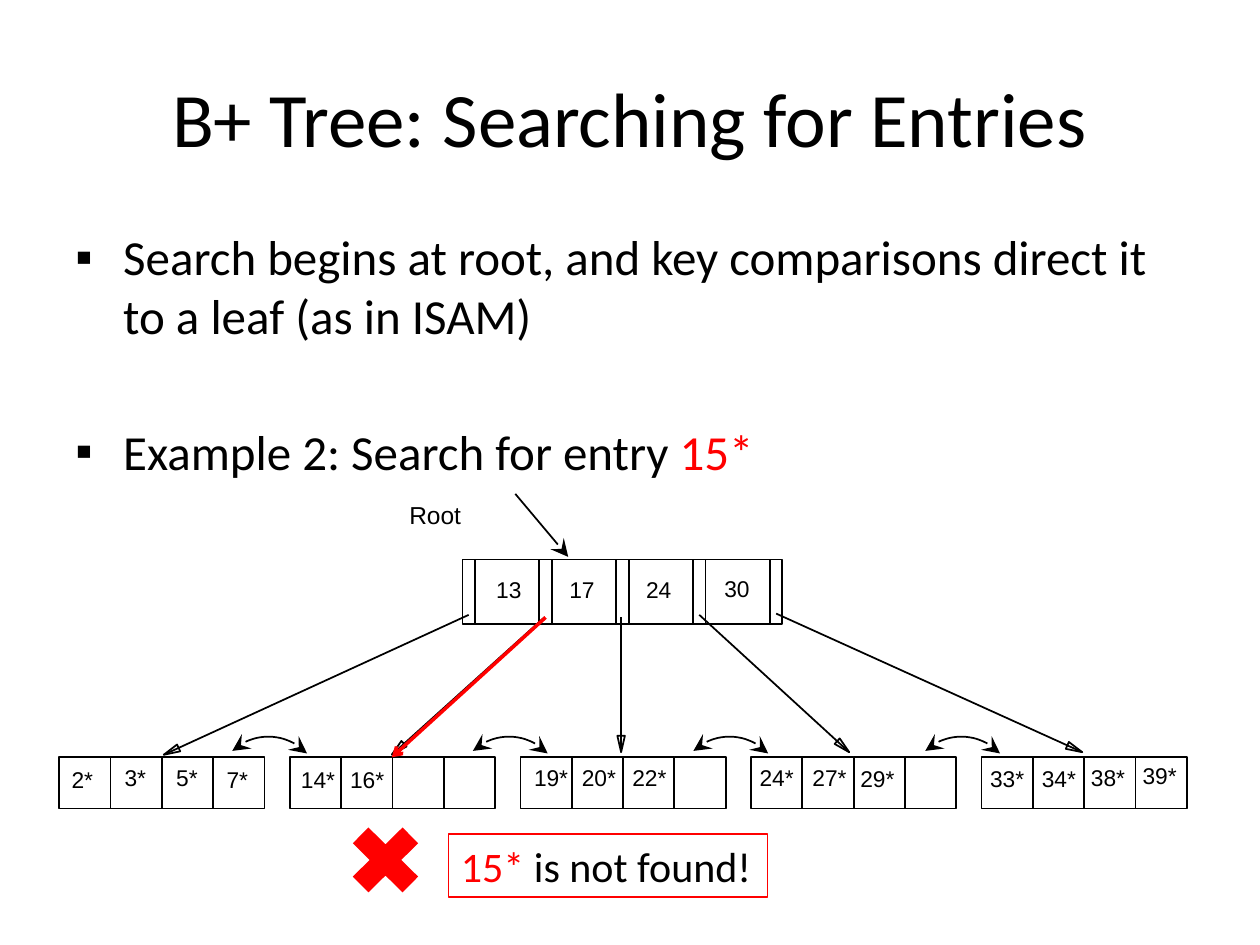
from math import atan2, cos, pi, sin

from lxml.etree import SubElement
from pptx import Presentation
from pptx.dml.color import RGBColor
from pptx.enum.shapes import MSO_CONNECTOR, MSO_SHAPE
from pptx.enum.text import MSO_ANCHOR, MSO_AUTO_SIZE, PP_ALIGN
from pptx.oxml.ns import qn
from pptx.util import Inches, Pt

BLACK = RGBColor(0, 0, 0)
RED = RGBColor(255, 0, 0)

# Tree layout in inches
ROOT_X, ROOT_Y, ROOT_W, ROOT_H = 3.67, 4.44, 0.61, 0.51
SLOT = 0.1
LEAF_X, LEAF_Y, LEAF_W, LEAF_GAP = 0.47, 6.01, 1.63, 1.83
CELL = LEAF_W / 4
ARC = 0.42

KEYS = [("13", 3.84, 4.52), ("17", 4.42, 4.52), ("24", 5.03, 4.52), ("30", 5.65, 4.51)]
ITEMS = [
    ("2*", 0.47, 6.03), ("3*", 0.89, 6.01), ("5*", 1.3, 6.01), ("7*", 1.7, 6.03),
    ("14*", 2.29, 6.03), ("16*", 2.68, 6.03),
    ("19*", 4.14, 6.01), ("20*", 4.52, 6.01), ("22*", 4.92, 6.01),
    ("24*", 5.93, 6.01), ("27*", 6.35, 6.01), ("29*", 6.73, 6.02),
    ("33*", 7.76, 6.02), ("34*", 8.17, 6.02), ("38*", 8.56, 6.01), ("39*", 8.97, 6),
]
LINKS = [
    (3.72, 4.88, 1.3, 5.99), (4.32, 4.9, 3.11, 5.99), (4.93, 4.9, 4.93, 5.97),
    (5.55, 4.88, 6.74, 5.97), (6.16, 4.87, 8.59, 5.97),
]
ARCS = [1.93, 3.84, 5.59, 7.43]


def put(obj, **vals):
    for name, val in vals.items():
        setattr(obj, name, val)


def style(shape, color=BLACK, width=1):
    """Outline only, without fill or shadow."""
    shape.shadow.inherit = False
    shape.fill.background()
    shape.line.color.rgb = color
    shape.line.width = Pt(width)


def add_tip(shape, kind, ends=("tailEnd",), size="med"):
    line = shape.line._get_or_add_ln()
    for end in ends:
        SubElement(line, qn(f"a:{end}"), type=kind, w=size, len=size)


def add_runs(para, runs, size, font):
    for words, color in runs:
        run = para.add_run()
        run.text = words
        put(run.font, size=Pt(size), name=font)
        run.font.color.rgb = color


def add_text(slide, box, runs, size, font="Calibri", para=None, **frame):
    shape = slide.shapes.add_textbox(*map(Inches, box))
    put(shape.text_frame, **{"word_wrap": False, **frame})
    first = shape.text_frame.paragraphs[0]
    put(first, **(para or {}))
    add_runs(first, runs, size, font)
    return shape


def add_label(slide, words, x, y, size=13):
    # Side insets plus the letters; a star is narrower than a digit
    width = 0.2 + 0.008 * size * len(words) - 0.03 * words.count("*")
    add_text(slide, (x, y, width, 0.32), [(words, BLACK)], size, "Arial",
             auto_size=MSO_AUTO_SIZE.SHAPE_TO_FIT_TEXT)


def add_bullet(para):
    props = para._p.get_or_add_pPr()
    indents = {"marL": Inches(0.38), "indent": Inches(-0.38)}
    for name, val in indents.items():
        props.set(name, str(int(val)))
    SubElement(props, qn("a:buFont"), typeface="Arial")
    SubElement(props, qn("a:buChar"), char="▪")


def add_cell(slide, x, y, w, h):
    style(slide.shapes.add_shape(MSO_SHAPE.RECTANGLE, *map(Inches, (x, y, w, h))))


def add_line(slide, ends, color=BLACK, width=1):
    line = slide.shapes.add_connector(MSO_CONNECTOR.STRAIGHT, *map(Inches, ends))
    line.line.color.rgb = color
    line.line.width = Pt(width)
    SubElement(line._element.spPr, qn("a:effectLst"))
    return line


def add_free(slide, points, close):
    spots = [(Inches(x), Inches(y)) for x, y in points]
    path = slide.shapes.build_freeform(*spots[0])
    path.add_line_segments(spots[1:], close=close)
    shape = path.convert_to_shape()
    style(shape)
    return shape


def add_link(slide, x1, y1, x2, y2):
    """Pointer line that ends in a hollow triangle."""
    add_line(slide, (x1, y1, x2, y2))
    turn = atan2(y2 - y1, x2 - x1)
    base_x, base_y = x2 - 0.13 * cos(turn), y2 - 0.13 * sin(turn)
    dx, dy = -0.03 * sin(turn), 0.03 * cos(turn)
    add_free(slide, [(base_x + dx, base_y + dy), (x2, y2),
                     (base_x - dx, base_y - dy)], True)


def add_arc(slide, x, y=5.76, steps=24):
    """Quarter circle, turned so that it bridges two leaves."""
    turns = [pi / 2 * i / steps for i in range(steps + 1)]
    points = [(x + ARC * sin(t), y + ARC * (1 - cos(t))) for t in turns]
    arc = add_free(slide, points, False)
    arc.rotation = 317
    add_tip(arc, "stealth", ("headEnd", "tailEnd"), "lg")


def add_body(slide):
    body = add_text(slide, (0.5, 1.75, 9, 4.95), [
        ("Search begins at root, and key comparisons direct it to a leaf (as in ISAM)", BLACK),
    ], 28, word_wrap=True)
    task = body.text_frame.add_paragraph()
    task.space_before = Pt(44)
    add_runs(task, [("Example 2: Search for entry ", BLACK), ("15*", RED)], 28, "Calibri")
    for para in body.text_frame.paragraphs:
        add_bullet(para)


def add_tree(slide):
    # Root node: pointer slots between the keys
    for i in range(4):
        x = ROOT_X + i * ROOT_W
        add_cell(slide, x, ROOT_Y, ROOT_W, ROOT_H)
        add_line(slide, (x + SLOT, ROOT_Y, x + SLOT, ROOT_Y + ROOT_H))
    add_cell(slide, ROOT_X + 4 * ROOT_W, ROOT_Y, SLOT, ROOT_H)

    # Leaf nodes
    for leaf in range(5):
        for i in range(4):
            add_cell(slide, LEAF_X + leaf * LEAF_GAP + i * CELL, LEAF_Y, CELL, CELL)

    # Pointers, labels and leaf chain
    for link in LINKS:
        add_link(slide, *link)
    add_label(slide, "Root", 3.15, 3.92, 14)
    for label in KEYS + ITEMS:
        add_label(slide, *label)
    add_tip(add_line(slide, (4.09, 3.92, 4.51, 4.42)), "stealth", size="lg")
    for x in ARCS:
        add_arc(slide, x)


def add_result(slide):
    # Search path, cross and verdict
    add_tip(add_line(slide, (4.33, 4.9, 3.11, 6.01), RED, 2), "arrow")
    cross = slide.shapes.add_shape(MSO_SHAPE.MATH_MULTIPLY,
                                   *map(Inches, (2.68, 6.45, 0.76, 0.75)))
    cross.shadow.inherit = False
    cross.fill.solid()
    cross.fill.fore_color.rgb = RED
    cross.line.fill.background()
    note = add_text(slide, (3.56, 6.62, 2.53, 0.5),
                    [("15*", RED), (" is not found!", BLACK)], 24,
                    auto_size=MSO_AUTO_SIZE.SHAPE_TO_FIT_TEXT)
    note.line.color.rgb = RED
    note.line.width = Pt(0.75)


def main():
    deck = Presentation()
    put(deck, slide_width=Inches(10), slide_height=Inches(7.5))
    slide = deck.slides.add_slide(deck.slide_layouts[6])
    add_text(slide, (0.5, 0.3, 9, 1.25), [("B+ Tree: Searching for Entries", BLACK)], 44,
             para={"alignment": PP_ALIGN.CENTER}, word_wrap=True,
             vertical_anchor=MSO_ANCHOR.MIDDLE)
    add_body(slide)
    add_tree(slide)
    add_result(slide)
    deck.save("out.pptx")


if __name__ == "__main__":
    main()
